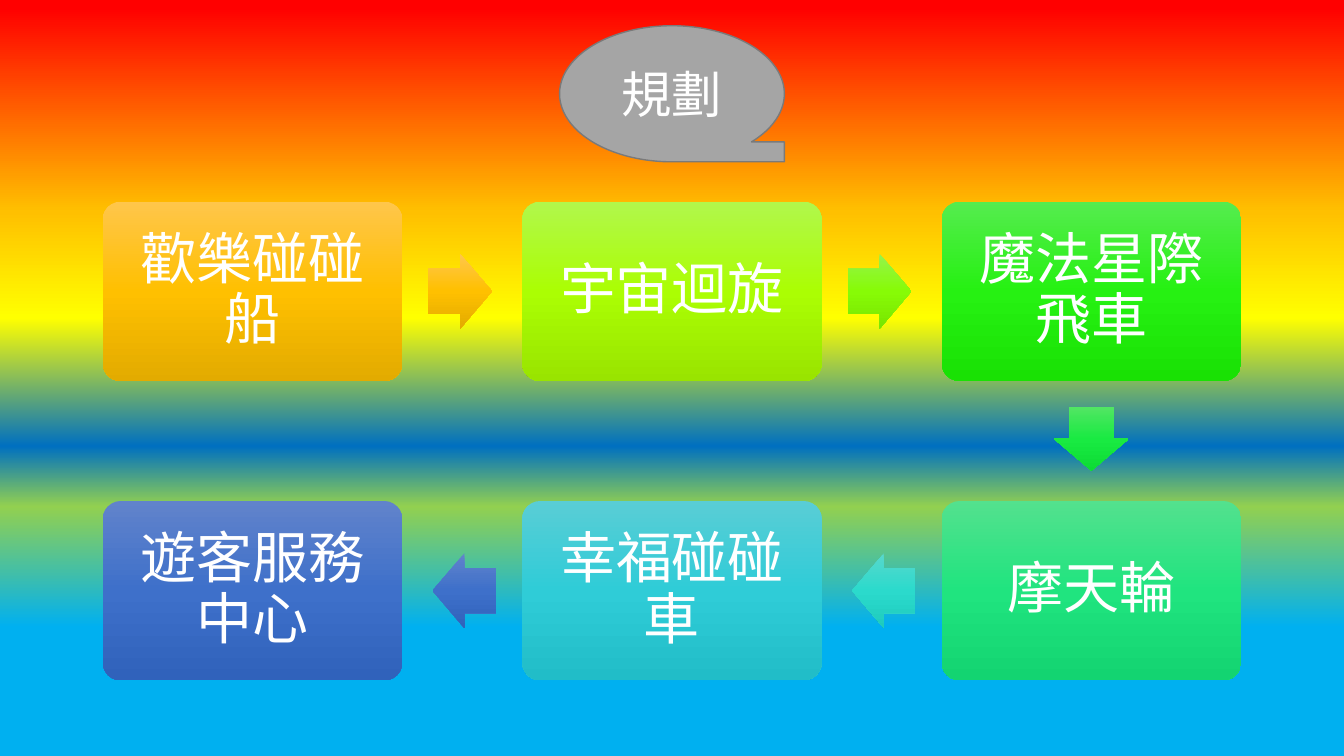
from dataclasses import dataclass
from typing import Any, NamedTuple

from lxml import etree
from pptx import Presentation, util as u
from pptx.dml.color import RGBColor
from pptx.enum import shapes, text
from pptx.oxml.ns import qn


@dataclass(frozen=True)
class Theme:
    font: str = "Calibri"
    title_size: int = 36
    stop_size: int = 40
    ink: str = "FFFFFF"
    balloon: str = "A5A5A5"
    balloon_edge: str = "7A7A7A"
    sky: tuple = (
        (1, "FF0000"), (28, "FFC000"), (42, "FFFF00"),
        (59, "0070C0"), (67, "92D050"), (83, "00B0F0"),
    )
    amber: tuple = ((0, "FFC64B"), (50, "FFC000"), (100, "E3AB00"))
    lime: tuple = ((0, "B1F74C"), (50, "ABFE03"), (100, "99E400"))
    leaf: tuple = ((0, "94F44C"), (50, "87FB06"), (100, "78E500"))
    green: tuple = ((0, "55EC4E"), (50, "26F112"), (100, "19E104"))
    emerald: tuple = ((0, "51E663"), (50, "19EA42"), (100, "0CDB34"))
    mint: tuple = ((0, "53E18E"), (50, "20E47F"), (100, "13D471"))
    turquoise: tuple = ((0, "58D8CC"), (50, "2BDACC"), (100, "1ECBBD"))
    cyan: tuple = ((0, "59CDD6"), (50, "2FCCD7"), (100, "21BDC8"))
    blue: tuple = ((0, "6183CB"), (50, "3E70CA"), (100, "3062BB"))


class Grid(NamedTuple):
    left: float = 1.02
    top: float = 2.0
    width: float = 2.97
    height: float = 1.78
    gap: float = 1.19

    def center(self, column: int, row: int) -> tuple[float, float]:
        return (
            self.left + self.width / 2 + column * (self.width + self.gap),
            self.top + self.height / 2 + row * (self.height + self.gap),
        )


class Stop(NamedTuple):
    name: str
    column: int
    row: int
    colors: tuple


class Step(NamedTuple):
    across: int
    down: int
    rotation: int


THEME = Theme()
GRID = Grid()
SLIDE_WIDTH, SLIDE_HEIGHT = 13.33, 7.5
ARROW_WIDTH, ARROW_HEIGHT, ARROW_SETBACK = 0.63, 0.74, 0.02
STOP_MARGIN = 0.17

RIGHT, DOWN, LEFT = Step(1, 0, 0), Step(0, 1, 90), Step(-1, 0, 180)

ROUTE = (
    Stop("歡樂碰碰船", 0, 0, THEME.amber),
    Stop("宇宙迴旋", 1, 0, THEME.lime),
    Stop("魔法星際飛車", 2, 0, THEME.green),
    Stop("摩天輪", 2, 1, THEME.mint),
    Stop("幸福碰碰車", 1, 1, THEME.cyan),
    Stop("遊客服務中心", 0, 1, THEME.blue),
)
STEPS = (
    (RIGHT, THEME.amber),
    (RIGHT, THEME.leaf),
    (DOWN, THEME.emerald),
    (LEFT, THEME.turquoise),
    (LEFT, THEME.blue),
)


def fill_downward(fill: Any, owner: Any, colors: tuple) -> None:
    fill.gradient()
    fill.gradient_angle = 270
    gradient = next(owner.iter(qn("a:gradFill")))
    gradient.set("rotWithShape", "0")
    color_list = gradient.find(qn("a:gsLst"))
    for default in list(color_list):
        color_list.remove(default)
    for position, color in colors:
        mark = etree.SubElement(color_list, qn("a:gs"), pos=str(position * 1000))
        etree.SubElement(mark, qn("a:srgbClr"), val=color)


def add_centered(slide: Any, preset: Any, center: tuple[float, float],
                 width: float, height: float) -> Any:
    x, y = center
    added = slide.shapes.add_shape(
        preset, u.Inches(x - width / 2), u.Inches(y - height / 2),
        u.Inches(width), u.Inches(height))
    added.shadow.inherit = False
    added.line.fill.background()
    return added


def write_label(holder: Any, wording: str, size: int) -> None:
    frame = holder.text_frame
    frame.text = wording
    frame.word_wrap = True
    frame.vertical_anchor = text.MSO_ANCHOR.MIDDLE
    paragraph = frame.paragraphs[0]
    paragraph.alignment = text.PP_ALIGN.CENTER
    font = paragraph.runs[0].font
    font.name = THEME.font
    font.size = u.Pt(size)
    font.color.rgb = RGBColor.from_string(THEME.ink)


def draw_stop(slide: Any, stop: Stop) -> None:
    ride = add_centered(slide, shapes.MSO_SHAPE.ROUNDED_RECTANGLE,
                        GRID.center(stop.column, stop.row), GRID.width, GRID.height)
    ride.adjustments[0] = 0.1
    fill_downward(ride.fill, ride.element, stop.colors)
    write_label(ride, stop.name, THEME.stop_size)
    frame = ride.text_frame
    frame.margin_left = frame.margin_right = u.Inches(STOP_MARGIN)
    frame.margin_top = frame.margin_bottom = u.Inches(STOP_MARGIN)
    frame.paragraphs[0].line_spacing = 0.9


def draw_step(slide: Any, start: Stop, step: Step, colors: tuple) -> None:
    x, y = GRID.center(start.column, start.row)
    reach_x = (GRID.width + GRID.gap) / 2 - ARROW_SETBACK
    reach_y = (GRID.height + GRID.gap) / 2 - ARROW_SETBACK
    center = (x + step.across * reach_x, y + step.down * reach_y)
    arrow = add_centered(slide, shapes.MSO_SHAPE.RIGHT_ARROW, center,
                         ARROW_WIDTH, ARROW_HEIGHT)
    arrow.adjustments[0] = 0.6
    arrow.adjustments[1] = 0.5
    arrow.rotation = step.rotation
    fill_downward(arrow.fill, arrow.element, colors)


def draw_title(slide: Any) -> None:
    balloon = add_centered(slide, shapes.MSO_SHAPE.FLOWCHART_SEQUENTIAL_ACCESS_STORAGE,
                           (SLIDE_WIDTH / 2, 0.93), 2.23, 1.35)
    balloon.fill.solid()
    balloon.fill.fore_color.rgb = RGBColor.from_string(THEME.balloon)
    balloon.line.color.rgb = RGBColor.from_string(THEME.balloon_edge)
    balloon.line.width = u.Pt(1)
    write_label(balloon, "規劃", THEME.title_size)


def main() -> None:
    deck = Presentation()
    deck.slide_width = u.Inches(SLIDE_WIDTH)
    deck.slide_height = u.Inches(SLIDE_HEIGHT)
    slide = deck.slides.add_slide(deck.slide_layouts[6])
    fill_downward(slide.background.fill, slide.element, THEME.sky)
    for stop in ROUTE:
        draw_stop(slide, stop)
    for start, (step, colors) in zip(ROUTE, STEPS):
        draw_step(slide, start, step, colors)
    draw_title(slide)
    deck.save("out.pptx")


if __name__ == "__main__":
    main()
